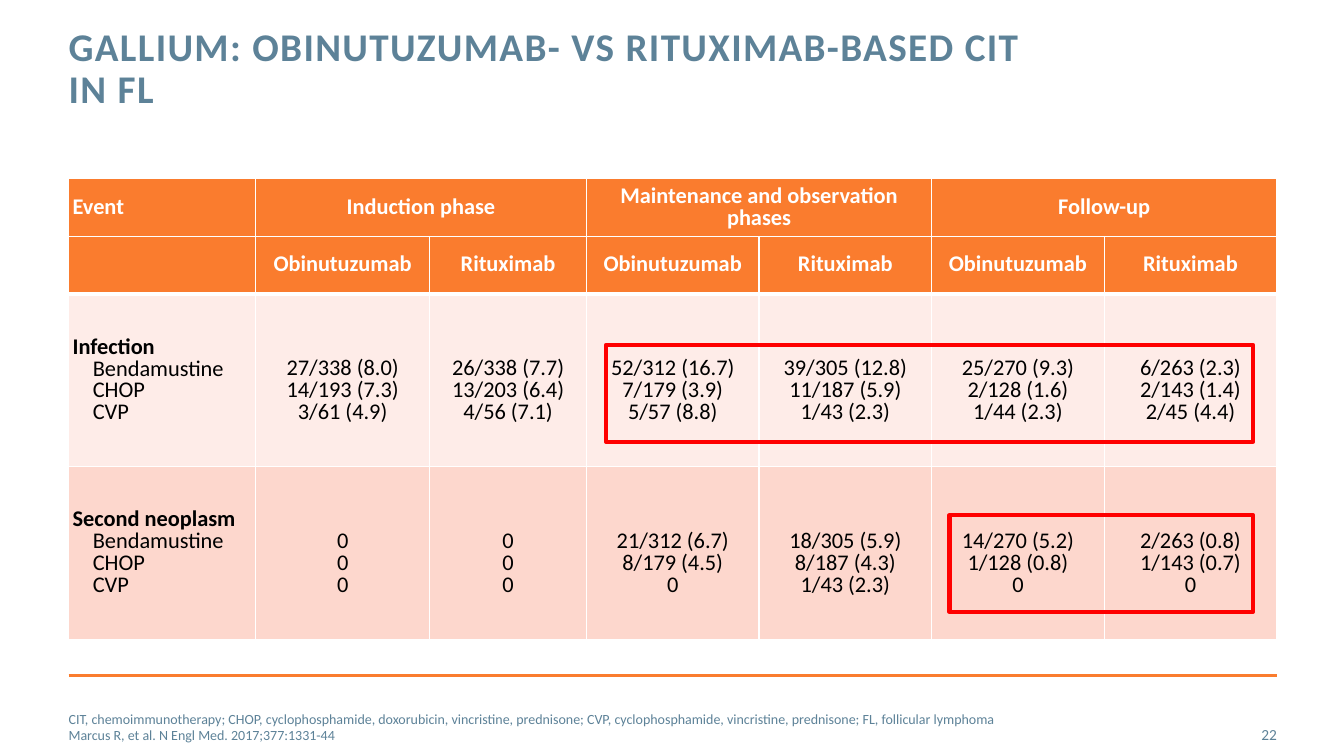
from dataclasses import dataclass
from typing import NamedTuple

from pptx import Presentation
from pptx.dml.color import RGBColor as Rgb
from pptx.enum.shapes import MSO_CONNECTOR as Conn, MSO_SHAPE as Form
from pptx.enum.text import MSO_ANCHOR as Anchor, PP_ALIGN as Align
from pptx.oxml.ns import qn
from pptx.util import Cm, Pt
from lxml.etree import SubElement as Sub


@dataclass(frozen=True)
class Theme:
    font: str = "Calibri"
    slate: str = "5D8298"
    orange: str = "FA7C2E"
    blush: str = "FEECE8"
    rose: str = "FDD7CD"
    red: str = "FF0000"
    white: str = "FFFFFF"
    black: str = "000000"
    title: int = 28
    body: int = 16
    page: int = 11
    note: int = 10


class Box(NamedTuple):
    left: float
    top: float
    width: float
    height: float

    def cm(self) -> tuple:
        return tuple(Cm(v) for v in self)


class Group(NamedTuple):
    name: str
    fill: str
    cells: list[str]


T = Theme()
EDGE = 1.73
WIDE = 30.45
COLS = [4.71, 4.39, 3.95] + [4.35] * 4
ROWS = [1.46, 1.45, 4.35, 4.35]
PHASES = ["Induction phase", "Maintenance and observation phases", "Follow-up"]
DRUGS = ["Obinutuzumab", "Rituximab"]
CHEMO = "Bendamustine\nCHOP\nCVP"
GROUPS = [
    Group("Infection", T.blush, [
        "27/338 (8.0)\n14/193 (7.3)\n3/61 (4.9)",
        "26/338 (7.7)\n13/203 (6.4)\n4/56 (7.1)",
        "52/312 (16.7)\n7/179 (3.9)\n5/57 (8.8)",
        "39/305 (12.8)\n11/187 (5.9)\n1/43 (2.3)",
        "25/270 (9.3)\n2/128 (1.6)\n1/44 (2.3)",
        "6/263 (2.3)\n2/143 (1.4)\n2/45 (4.4)",
    ]),
    Group("Second neoplasm", T.rose, [
        "0\n0\n0",
        "0\n0\n0",
        "21/312 (6.7)\n8/179 (4.5)\n0",
        "18/305 (5.9)\n8/187 (4.3)\n1/43 (2.3)",
        "14/270 (5.2)\n1/128 (0.8)\n0",
        "2/263 (0.8)\n1/143 (0.7)\n0",
    ]),
]
MARKS = [Box(15.27, 8.69, 16.31, 2.44), Box(23.93, 12.98, 7.65, 2.44)]
NOTE = (
    "CIT, chemoimmunotherapy; CHOP, cyclophosphamide, doxorubicin, vincristine, "
    "prednisone; CVP, cyclophosphamide, vincristine, prednisone; FL, follicular lymphoma\n"
    "Marcus R, et al. N Engl Med. 2017;377:1331-44"
)


def write(frame, text: str, *, size: int = T.body, color: str = T.black,
          bold: bool = False, align=Align.LEFT, gap=None, track: int = 0,
          dent: float = 0, more: bool = False) -> None:
    for i, line in enumerate(text.split("\n")):
        para = frame.add_paragraph() if more or i else frame.paragraphs[0]
        para.alignment = align
        if gap is not None:
            para.line_spacing = gap
        if dent:
            para._p.get_or_add_pPr().set("indent", str(Cm(dent)))
        run = para.add_run()
        run.text = line
        font = run.font
        font.name, font.size, font.bold = T.font, Pt(size), bold
        font.color.rgb = Rgb.from_string(color)
        if track:
            run._r.get_or_add_rPr().set("spc", str(track * 100))


def label(slide, box: Box, text: str, anchor=Anchor.MIDDLE, **fmt) -> None:
    frame = slide.shapes.add_textbox(*box.cm()).text_frame
    frame.word_wrap = True
    frame.vertical_anchor = anchor
    frame.margin_left = frame.margin_right = 0
    frame.margin_top = frame.margin_bottom = 0
    write(frame, text, **fmt)


def style(cell, fill: str, top: int = 1, base: int = 1, drop: float = 0) -> None:
    props = cell._tc.get_or_add_tcPr()
    for side, width in zip("LRTB", (1, 1, top, base)):
        line = Sub(props, qn(f"a:ln{side}"), w=str(Pt(width)))
        Sub(Sub(line, qn("a:solidFill")), qn("a:srgbClr"), val=T.white)
    cell.fill.solid()
    cell.fill.fore_color.rgb = Rgb.from_string(fill)
    cell.vertical_anchor = Anchor.MIDDLE
    cell.margin_left = cell.margin_right = Cm(0.1)
    cell.margin_top, cell.margin_bottom = Cm(0.05 + drop), Cm(0.05)


def grid(slide) -> None:
    box = Box(EDGE, 4.5, sum(COLS), sum(ROWS))
    table = slide.shapes.add_table(len(ROWS), len(COLS), *box.cm()).table
    table.first_row = table.horz_banding = False
    for col, width in zip(table.columns, COLS):
        col.width = Cm(width)
    for row, height in zip(table.rows, ROWS):
        row.height = Cm(height)

    head = dict(color=T.white, bold=True, gap=0.8)
    for col in range(len(COLS)):
        style(table.cell(0, col), T.orange)
        style(table.cell(1, col), T.orange, base=3)
    write(table.cell(0, 0).text_frame, "Event", **head)
    for i, phase in enumerate(PHASES):
        col = 1 + 2 * i
        table.cell(0, col).merge(table.cell(0, col + 1))
        write(table.cell(0, col).text_frame, phase, align=Align.CENTER, **head)
        for j, drug in enumerate(DRUGS):
            write(table.cell(1, col + j).text_frame, drug, align=Align.CENTER, **head)

    for row, group in enumerate(GROUPS, 2):
        top = 3 if row == 2 else 1
        first = table.cell(row, 0)
        style(first, group.fill, top)
        write(first.text_frame, group.name, bold=True, gap=0.8)
        write(first.text_frame, CHEMO, gap=0.8, dent=0.51, more=True)
        for col, text in enumerate(group.cells, 1):
            cell = table.cell(row, col)
            style(cell, group.fill, top, drop=0.55)
            write(cell.text_frame, text, align=Align.CENTER, gap=0.8)


def rule(slide) -> None:
    line = slide.shapes.add_connector(
        Conn.STRAIGHT, Cm(EDGE), Cm(17.02), Cm(EDGE + WIDE), Cm(17.02))
    line.line.color.rgb = Rgb.from_string(T.orange)
    line.line.width = Pt(2)
    Sub(line._element.spPr, qn("a:effectLst"))


def mark(slide, box: Box) -> None:
    shape = slide.shapes.add_shape(Form.RECTANGLE, *box.cm())
    shape.shadow.inherit = False
    shape.fill.background()
    shape.line.color.rgb = Rgb.from_string(T.red)
    shape.line.width = Pt(3)


def main() -> None:
    deck = Presentation()
    deck.slide_width, deck.slide_height = Cm(33.87), Cm(19.05)
    slide = deck.slides.add_slide(deck.slide_layouts[6])
    rule(slide)
    label(slide, Box(EDGE, 0.69, 24.28, 2.24),
          "GALLIUM: OBINUTUZUMAB- VS RITUXIMAB-BASED CIT IN FL", Anchor.TOP,
          size=T.title, color=T.slate, bold=True, gap=Pt(30), track=1)
    label(slide, Box(EDGE, 17.81, 29.44, 1.02), NOTE, size=T.note, color=T.slate)
    label(slide, Box(30, 17.99, 2.18, 1.02), "22",
          size=T.page, color=T.slate, align=Align.RIGHT)
    grid(slide)
    for box in MARKS:
        mark(slide, box)
    deck.save("out.pptx")


if __name__ == "__main__":
    main()
